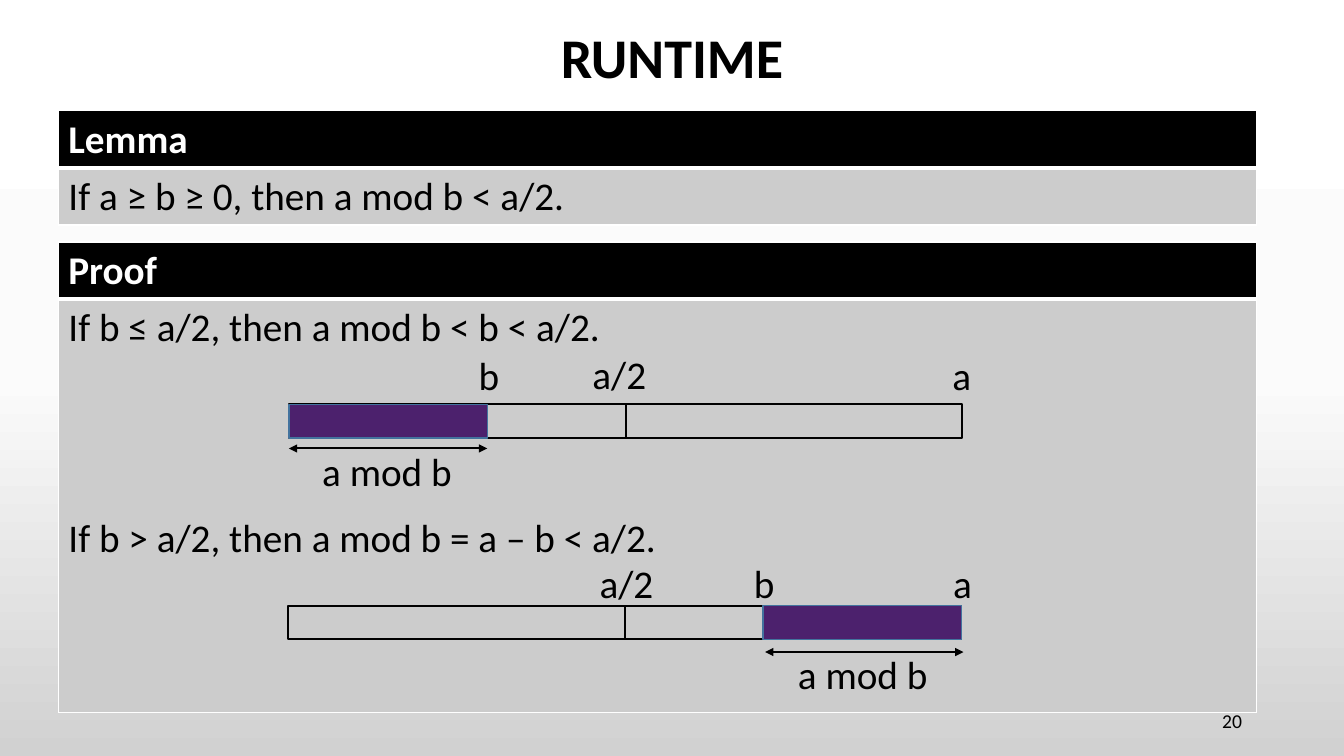
"""Builds the slide on the runtime lemma and its proof with two bar diagrams."""
import copy

import pptx
import pptx.util
import pptx.dml.color
import pptx.enum.shapes
import pptx.enum.text
import pptx.oxml
import pptx.oxml.ns

Cm, Pt = pptx.util.Cm, pptx.util.Pt
RGBColor = pptx.dml.color.RGBColor
Align, Anchor = pptx.enum.text.PP_ALIGN, pptx.enum.text.MSO_ANCHOR
Shape = pptx.enum.shapes.MSO_SHAPE
STRAIGHT = pptx.enum.shapes.MSO_CONNECTOR.STRAIGHT
qn = pptx.oxml.ns.qn

BLACK = RGBColor(0x00, 0x00, 0x00)
WHITE = RGBColor(0xFF, 0xFF, 0xFF)
GREY = RGBColor(0xCC, 0xCC, 0xCC)
PURPLE = RGBColor(0x4C, 0x21, 0x6D)
BLUE = RGBColor(0x43, 0x73, 0x9E)
BACKGROUND = [RGBColor(0xFF, 0xFF, 0xFF), RGBColor(0xFB, 0xFB, 0xFB), RGBColor(0xD1, 0xD1, 0xD1)]

BAR_WIDTH, BAR_HEIGHT, REST_WIDTH = 16.97, 0.85, 5
LABEL_WIDTHS = {"a/2": 1.88, "a": 0.99, "b": 1.04, "a mod b": 3.81}
LABEL_HEIGHT = 1.45


def write(para, text, size=28, color=BLACK, bold=False, align=Align.LEFT):
    para.alignment = align
    span = para.add_run()
    span.text = text
    span.font.name = "Calibri"
    span.font.size = Pt(size)
    span.font.bold = bold
    span.font.color.rgb = color


def add_line(page, left, top, right, bottom):
    line = page.shapes.add_connector(STRAIGHT, Cm(left), Cm(top), Cm(right), Cm(bottom))
    line.line.color.rgb = BLACK
    line.line.width = Pt(1.5)
    line._element.spPr.append(pptx.oxml.parse_xml(f"<a:effectLst {pptx.oxml.ns.nsdecls('a')}/>"))
    return line


deck = pptx.Presentation()
deck.slide_width, deck.slide_height = Cm(33.87), Cm(19.05)
page = deck.slides.add_slide(deck.slide_layouts[5])

fill = page.background.fill
fill.gradient()
fill.gradient_angle = 270
stop_list = page._element.find(".//" + qn("a:gsLst"))
stop_list.insert(1, copy.deepcopy(stop_list[0]))
for stop, color, position in zip(fill.gradient_stops, BACKGROUND, [0, 0.5, 1]):
    stop.color.rgb = color
    stop.position = position

title = page.shapes.title
title.left, title.top, title.width, title.height = Cm(0), Cm(0), Cm(33.87), Cm(3.05)
title.text_frame.vertical_anchor = Anchor.MIDDLE
title_para = title.text_frame.paragraphs[0]
title_para.line_spacing = 0.9
write(title_para, "RUNTIME", size=40, bold=True, align=Align.CENTER)

number = page.shapes.add_textbox(Cm(23.93), Cm(17.65), Cm(7.62), Cm(1.02))
number.text_frame.word_wrap = True
number.text_frame.vertical_anchor = Anchor.MIDDLE
write(number.text_frame.paragraphs[0], "20", size=14, align=Align.RIGHT)

panels = [
    (2.79, 1.44, "Lemma", ["If a ≥ b ≥ 0, then a mod b < a/2."]),
    (6.1, 10.42, "Proof", ["If b ≤ a/2, then a mod b < b < a/2.",
                           "If b > a/2, then a mod b = a – b < a/2."]),
]
for top, body_height, heading, statements in panels:
    frame = page.shapes.add_table(2, 1, Cm(1.47), Cm(top), Cm(30.2), Cm(1.44 + body_height))
    table = frame.table
    table.rows[0].height, table.rows[1].height = Cm(1.44), Cm(body_height)
    rows = [("B", BLACK, WHITE, True, [heading]), ("T", GREY, BLACK, False, statements)]
    for index, (thick_side, back, ink, bold, lines) in enumerate(rows):
        cell = table.cell(index, 0)
        for side in "LRTB":
            width = Pt(3 if side == thick_side else 1)
            cell._tc.get_or_add_tcPr().append(pptx.oxml.parse_xml(
                f'<a:ln{side} {pptx.oxml.ns.nsdecls("a")} w="{width}"><a:solidFill>'
                f'<a:srgbClr val="{WHITE}"/></a:solidFill></a:ln{side}>'))
        cell.fill.solid()
        cell.fill.fore_color.rgb = back
        for line_index, text in enumerate(lines):
            para = cell.text_frame.add_paragraph() if line_index else cell.text_frame.paragraphs[0]
            if line_index:
                para.space_before = Pt(116.5)
            write(para, text, color=ink, bold=bold)

diagrams = [
    (7.28, 10.19, 7.28, 7.28, 11.3,
     [("a/2", 14.68, 8.71), ("a", 23.75, 8.74), ("b", 11.81, 8.74), ("a mod b", 7.87, 11.15)]),
    (7.26, 15.26, 19.23, 19.28, 16.43,
     [("a/2", 14.86, 13.97), ("a", 23.77, 13.97), ("b", 18.75, 13.97), ("a mod b", 19.86, 16.26)]),
]
for bar_left, bar_top, rest_left, arrow_left, arrow_top, labels in diagrams:
    bar = page.shapes.add_shape(Shape.RECTANGLE, Cm(bar_left), Cm(bar_top), Cm(BAR_WIDTH), Cm(BAR_HEIGHT))
    bar.shadow.inherit = False
    bar.fill.background()
    bar.line.color.rgb = BLACK
    bar.line.width = Pt(1.5)

    middle = bar_left + BAR_WIDTH / 2
    half_mark = add_line(page, middle, bar_top, middle, bar_top + BAR_HEIGHT)
    half_mark.begin_connect(bar, 0)
    half_mark.end_connect(bar, 2)

    rest = page.shapes.add_shape(Shape.RECTANGLE, Cm(rest_left), Cm(bar_top), Cm(REST_WIDTH), Cm(BAR_HEIGHT))
    rest.shadow.inherit = False
    rest.fill.solid()
    rest.fill.fore_color.rgb = PURPLE
    rest.line.color.rgb = BLUE
    rest.line.width = Pt(1)

    arrow = add_line(page, arrow_left, arrow_top, arrow_left + REST_WIDTH, arrow_top)
    for end in ("headEnd", "tailEnd"):
        arrow.line._get_or_add_ln().append(pptx.oxml.parse_xml(
            f'<a:{end} {pptx.oxml.ns.nsdecls("a")} type="triangle"/>'))

    for text, left, top in labels:
        box = page.shapes.add_textbox(Cm(left), Cm(top), Cm(LABEL_WIDTHS[text]), Cm(LABEL_HEIGHT))
        box.text_frame.word_wrap = False
        box.text_frame.auto_size = pptx.enum.text.MSO_AUTO_SIZE.SHAPE_TO_FIT_TEXT
        write(box.text_frame.paragraphs[0], text)

deck.save("out.pptx")
